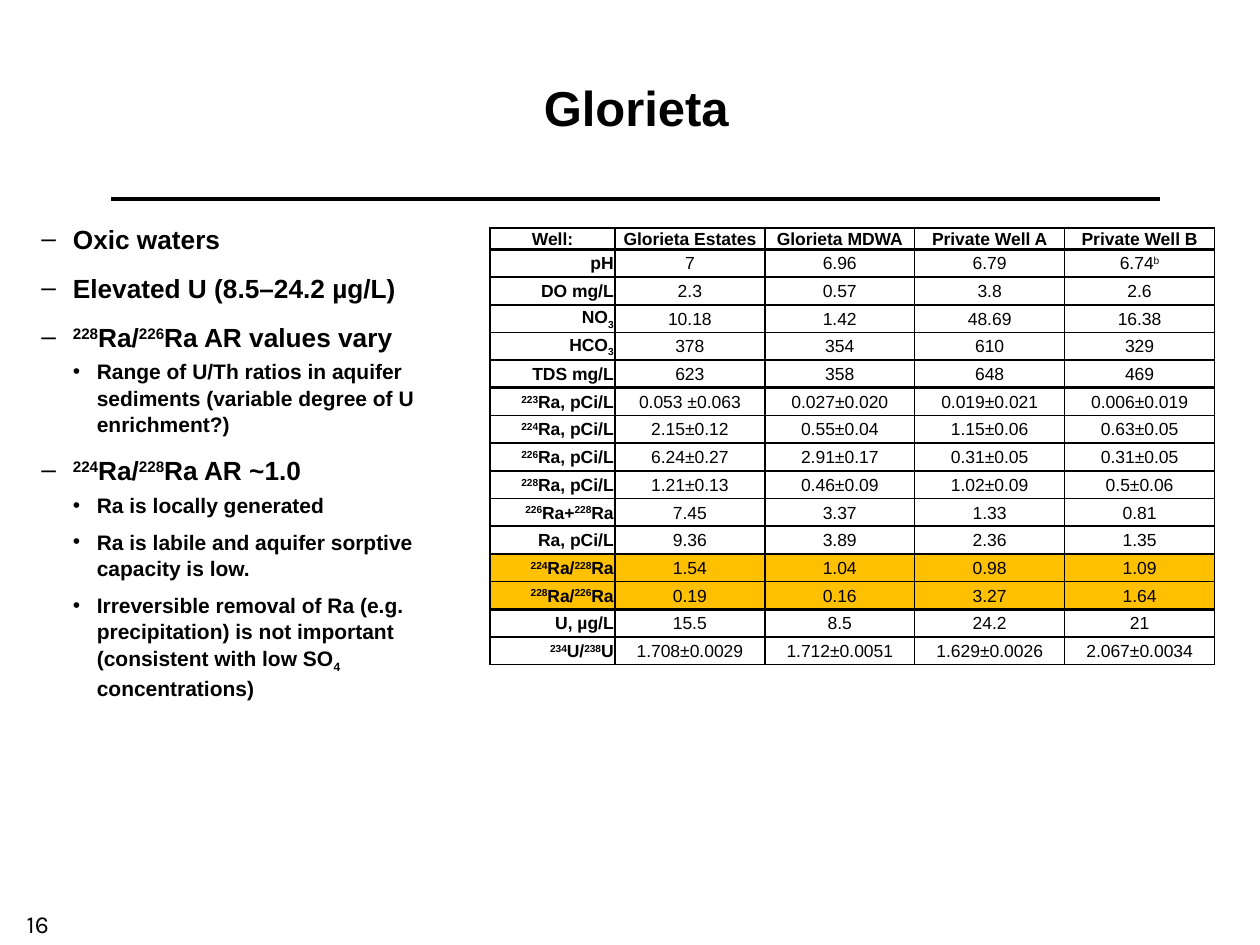
from lxml import etree
from pptx import Presentation
from pptx.dml.color import RGBColor
from pptx.enum.shapes import MSO_CONNECTOR
from pptx.enum.text import MSO_ANCHOR, PP_ALIGN
from pptx.oxml.ns import qn
from pptx.util import Inches, Pt

CENTER, RIGHT, LEFT = PP_ALIGN.CENTER, PP_ALIGN.RIGHT, PP_ALIGN.LEFT
MIDDLE, BOTTOM = MSO_ANCHOR.MIDDLE, MSO_ANCHOR.BOTTOM
STRAIGHT = MSO_CONNECTOR.STRAIGHT

# Content: "|" separates runs, "^" marks superscript and "_" subscript
TITLE = "Glorieta"
PAGE_NUMBER = "16"
POINTS = [
    ("Oxic waters", []),
    ("Elevated U (8.5–24.2 µg/L)", []),
    ("^228|Ra/|^226|Ra AR values vary", [
        "Range of U/Th ratios in aquifer sediments (variable degree of U enrichment?)",
    ]),
    ("^224|Ra/|^228|Ra AR ~1.0", [
        "Ra is locally generated",
        "Ra is labile and aquifer sorptive capacity is low.",
        "Irreversible removal of Ra (e.g. precipitation) is not important "
        "(consistent with low SO|_4| concentrations)",
    ]),
]
WELLS = [
    ("Well:", "Glorieta Estates", "Glorieta MDWA", "Private Well A", "Private Well B"),
    ("pH", "7", "6.96", "6.79", "6.74|^b"),
    ("DO mg/L", "2.3", "0.57", "3.8", "2.6"),
    ("NO|_3", "10.18", "1.42", "48.69", "16.38"),
    ("HCO|_3", "378", "354", "610", "329"),
    ("TDS mg/L", "623", "358", "648", "469"),
    ("^223|Ra, pCi/L", "0.053 ±0.063", "0.027±0.020", "0.019±0.021", "0.006±0.019"),
    ("^224|Ra, pCi/L", "2.15±0.12", "0.55±0.04", "1.15±0.06", "0.63±0.05"),
    ("^226|Ra, pCi/L", "6.24±0.27", "2.91±0.17", "0.31±0.05", "0.31±0.05"),
    ("^228|Ra, pCi/L", "1.21±0.13", "0.46±0.09", "1.02±0.09", "0.5±0.06"),
    ("^226|Ra+|^228|Ra", "7.45", "3.37", "1.33", "0.81"),
    ("Ra, pCi/L", "9.36", "3.89", "2.36", "1.35"),
    ("^224|Ra/|^228|Ra", "1.54", "1.04", "0.98", "1.09"),
    ("^228|Ra/|^226|Ra", "0.19", "0.16", "3.27", "1.64"),
    ("U, µg/L", "15.5", "8.5", "24.2", "21"),
    ("^234|U/|^238|U", "1.708±0.0029", "1.712±0.0051", "1.629±0.0026", "2.067±0.0034"),
]
HIGHLIGHTED_ROWS = {12, 13}
GROUP_ENDS = {0, 5, 13}  # rows with a thick rule below

COLORS = {"ink": "000000", "highlight": "FFC000"}
BASELINES = {"^": "30000", "_": "-25000"}
HEADER_HEIGHT, ROW_HEIGHT = 0.17, 0.22
LABEL_WIDTH, VALUE_WIDTH = 0.99, 1.19


def color(name):
    return RGBColor.from_string(COLORS[name])


def add_runs(paragraph, text, size, bold=True, font="Arial"):
    for piece in text.split("|"):
        baseline = BASELINES.get(piece[0])
        run = paragraph.add_run()
        run.text = piece[1:] if baseline else piece
        run.font.name, run.font.size, run.font.bold = font, Pt(size), bold
        run.font.color.rgb = color("ink")
        if baseline:
            run.font._element.set("baseline", baseline)


def add_bullet(paragraph, character, indent, hanging):
    properties = paragraph._p.get_or_add_pPr()
    properties.set("marL", str(Inches(indent)))
    properties.set("indent", str(-Inches(hanging)))
    etree.SubElement(properties, qn("a:buFont"), typeface="Arial")
    etree.SubElement(properties, qn("a:buChar"), char=character)


def add_border(cell, side, width):
    line = etree.SubElement(cell._tc.get_or_add_tcPr(), qn("a:ln" + side), w=str(Pt(width)))
    fill = etree.SubElement(line, qn("a:solidFill"))
    etree.SubElement(fill, qn("a:srgbClr"), val=COLORS["ink"])


def add_title(slide):
    title = slide.shapes.title
    title.left, title.top, title.width, title.height = map(Inches, (0.8, 0.18, 8.5, 1.33))
    title.text_frame.vertical_anchor = MIDDLE
    paragraph = title.text_frame.paragraphs[0]
    paragraph.alignment = CENTER
    add_runs(paragraph, TITLE, 28)

    # Rule under the title
    rule = slide.shapes.add_connector(STRAIGHT, *map(Inches, (0.88, 1.58, 9.21, 1.58)))
    rule.line.color.rgb = color("ink")
    rule.line.width = Pt(2)
    etree.SubElement(rule._element.spPr, qn("a:effectLst"))


def add_well_table(slide):
    columns = len(WELLS[0])
    width = LABEL_WIDTH + VALUE_WIDTH * (columns - 1)
    height = HEADER_HEIGHT + ROW_HEIGHT * (len(WELLS) - 1)
    table = slide.shapes.add_table(len(WELLS), columns, Inches(3.89), Inches(1.81),
                                   Inches(width), Inches(height)).table
    table.first_row = table.horz_banding = False
    for index, column in enumerate(table.columns):
        column.width = Inches(VALUE_WIDTH if index else LABEL_WIDTH)
    for row_index, values in enumerate(WELLS):
        table.rows[row_index].height = Inches(ROW_HEIGHT if row_index else HEADER_HEIGHT)
        for column_index, text in enumerate(values):
            is_header, is_label = row_index == 0, column_index == 0
            cell = table.cell(row_index, column_index)
            cell.margin_left = cell.margin_right = cell.margin_top = Inches(0.01)
            cell.margin_bottom = 0
            cell.vertical_anchor = MIDDLE
            add_border(cell, "L", 1)
            add_border(cell, "R", 1)
            add_border(cell, "T", 2 if row_index - 1 in GROUP_ENDS else 1)
            add_border(cell, "B", 2 if row_index in GROUP_ENDS else 1)
            if row_index in HIGHLIGHTED_ROWS:
                cell.fill.solid()
                cell.fill.fore_color.rgb = color("highlight")
            else:
                cell.fill.background()
            paragraph = cell.text_frame.paragraphs[0]
            paragraph.alignment = RIGHT if is_label and not is_header else CENTER
            add_runs(paragraph, text, 10, bold=is_header or is_label)


def add_text_box(slide, left, top, width, height):
    box = slide.shapes.add_textbox(*map(Inches, (left, top, width, height)))
    box.text_frame.word_wrap = True
    return box.text_frame


def add_points(slide):
    frame = add_text_box(slide, 0.23, 1.71, 3.72, 3.75)
    previous_had_details = False
    for index, (point, details) in enumerate(POINTS):
        paragraph = frame.add_paragraph() if index else frame.paragraphs[0]
        before = 0 if index == 0 else 3 if previous_had_details else 6
        lines = [(paragraph, point, "–", 0.25, 0.25, 15, before, 3)]
        lines += [(frame.add_paragraph(), detail, "•", 0.44, 0.19, 12, 0, 6)
                  for detail in details]
        for paragraph, text, bullet, indent, hanging, size, before, after in lines:
            paragraph.alignment = LEFT
            paragraph.line_spacing = 1.05
            paragraph.space_before, paragraph.space_after = Pt(before), Pt(after)
            add_bullet(paragraph, bullet, indent, hanging)
            add_runs(paragraph, text, size)
        previous_had_details = bool(details)


def add_page_number(slide):
    frame = add_text_box(slide, 0, 7, 0.6, 0.5)
    frame.vertical_anchor = BOTTOM
    frame.paragraphs[0].alignment = CENTER
    add_runs(frame.paragraphs[0], PAGE_NUMBER, 14, bold=False, font="Karla")


def main():
    presentation = Presentation()
    presentation.slide_width, presentation.slide_height = Inches(10), Inches(7.5)
    slide = presentation.slides.add_slide(presentation.slide_layouts[5])
    add_title(slide)
    add_well_table(slide)
    add_points(slide)
    add_page_number(slide)
    presentation.save("out.pptx")


if __name__ == "__main__":
    main()
